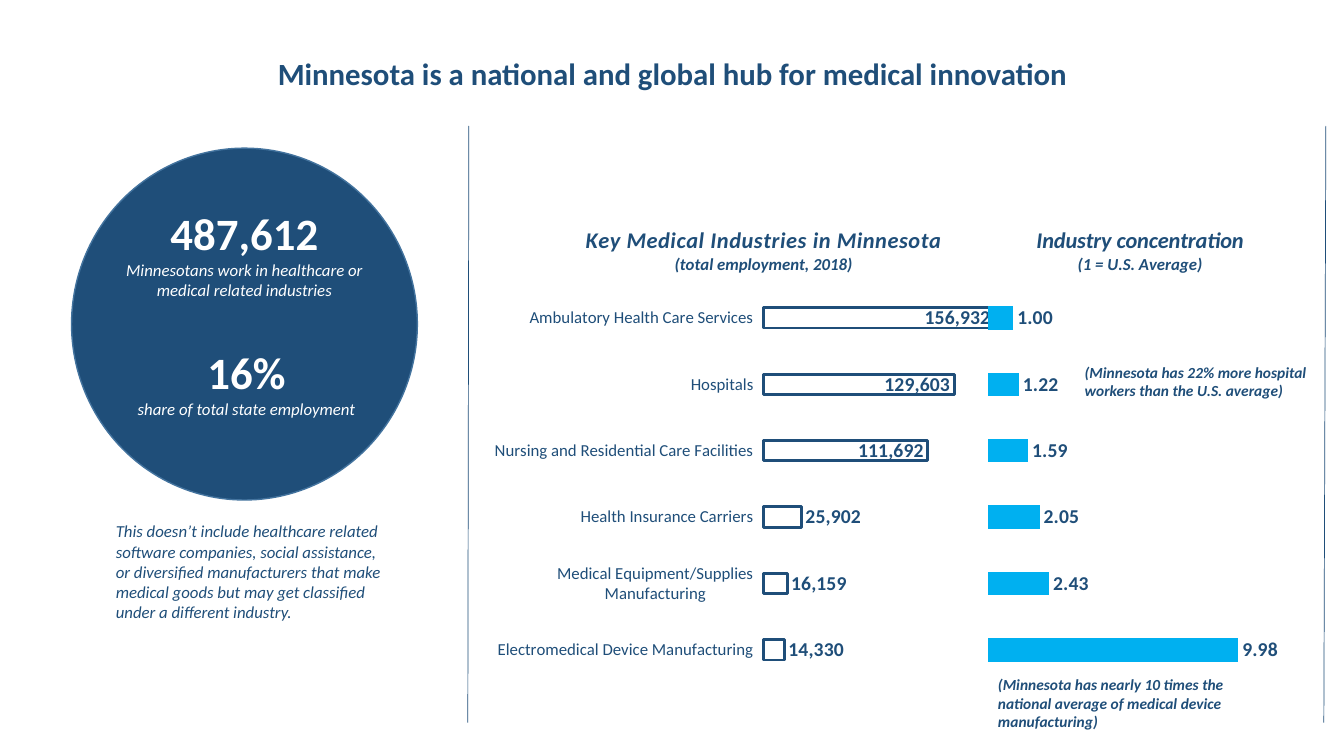
import pptx
import pptx.util
import pptx.chart.data
import pptx.dml.color
import pptx.enum.chart
import pptx.enum.shapes
import pptx.enum.text
import pptx.oxml
import pptx.oxml.ns

Inches = pptx.util.Inches
COLORS = {"navy": "1F4E79", "edge": "43739E", "cyan": "00B0F0", "white": "FFFFFF"}
BIG = {"size": 32, "color": "white", "bold": True}
SMALL = {"size": 12, "color": "white", "italic": True}
NOTE = {"size": 12, "color": "navy", "italic": True}
REMARK = {"size": 11, "color": "navy", "bold": True, "italic": True}
HEADING = {"size": 22, "color": "navy", "bold": True}
CHART_TITLE = {"size": 16, "color": "navy", "bold": True, "italic": True}
CHART_SUBTITLE = {"size": 12, "color": "navy", "bold": True, "italic": True}
VALUE_LABEL = {"size": 14, "color": "navy", "bold": True}
CATEGORY = {"size": 12, "color": "navy", "bold": False}
INDUSTRIES = [
    ("Electromedical Device Manufacturing", 14330, 9.98),
    ("Medical Equipment/Supplies Manufacturing", 16159, 2.43),
    ("Health Insurance Carriers", 25902, 2.05),
    ("Nursing and Residential Care Facilities", 111692, 1.59),
    ("Hospitals", 129603, 1.22),
    ("Ambulatory Health Care Services", 156932, 1),
]


def rgb(name):
    """Return the named colour."""
    return pptx.dml.color.RGBColor.from_string(COLORS[name])


def style_font(font, formats):
    """Apply a dict of format values to a font."""
    font.name = "Calibri"
    for key, value in formats.items():
        if key == "color":
            font.color.rgb = rgb(value)
        else:
            setattr(font, key, pptx.util.Pt(value) if key == "size" else value)


def add_text(s, box, lines, centered=False, middle=False, spacing=None):
    """Add a wrapped text box holding one paragraph of styled lines."""
    sp = s.shapes.add_textbox(*map(Inches, box))
    tf = sp.text_frame
    tf.word_wrap = True
    if middle:
        tf.vertical_anchor = pptx.enum.text.MSO_ANCHOR.MIDDLE
    p = tf.paragraphs[0]
    if centered:
        p.alignment = pptx.enum.text.PP_ALIGN.CENTER
    if spacing:
        p.line_spacing = spacing
    for i, (text, formats) in enumerate(lines):
        if i:
            p.add_line_break()
        r = p.add_run()
        r.text = text
        style_font(r.font, formats)


def add_circle(s, box):
    """Add the filled circle behind the key figures."""
    sp = s.shapes.add_shape(pptx.enum.shapes.MSO_SHAPE.OVAL, *map(Inches, box))
    sp.shadow.inherit = False
    sp.fill.solid()
    sp.fill.fore_color.rgb = rgb("navy")
    sp.line.color.rgb = rgb("edge")
    sp.line.width = pptx.util.Pt(1)


def add_divider(s, x1, x2):
    """Add a thin, nearly vertical rule."""
    points = map(Inches, (x1, 1.25, x2, 7.17))
    sp = s.shapes.add_connector(pptx.enum.shapes.MSO_CONNECTOR.STRAIGHT, *points)
    sp.line.color.rgb = rgb("navy")
    sp.line.width = pptx.util.Pt(0.5)
    sp._element.spPr.append(pptx.oxml.parse_xml(
        f"<a:effectLst {pptx.oxml.ns.nsdecls('a')}/>"))


def make_layout(target=None, **fractions):
    """Build a manual layout from fractions of the chart size."""
    inner = f'<c:layoutTarget val="{target}"/>' if target else ""
    inner += '<c:xMode val="edge"/><c:yMode val="edge"/>'
    inner += "".join(f'<c:{k} val="{v}"/>' for k, v in fractions.items())
    return pptx.oxml.parse_xml(
        f"<c:layout {pptx.oxml.ns.nsdecls('c')}><c:manualLayout>{inner}"
        "</c:manualLayout></c:layout>")


def drop_layout(element):
    """Remove the automatic layout of a chart part."""
    for old in element.xpath("./c:layout"):
        element.remove(old)


def add_chart_title(chart, lines, x, tracking):
    """Add a two-line chart title at a fixed place."""
    chart.has_title = True
    tf = chart.chart_title.text_frame
    for i, (text, formats) in enumerate(zip(lines, (CHART_TITLE, CHART_SUBTITLE))):
        p = tf.add_paragraph() if i else tf.paragraphs[0]
        p.alignment = pptx.enum.text.PP_ALIGN.CENTER
        r = p.add_run()
        r.text = text
        style_font(r.font, formats)
        if tracking and not i:
            r.font._element.set("spc", str(tracking))
    title = chart.chart_title._element
    drop_layout(title)
    title.xpath("./c:tx")[0].addnext(make_layout(x=x, y=0.04))
    chart.chart_title.include_in_layout = False


def add_bars(s, box, cats, vals, fmt, top, gap, plot_x, plot_w):
    """Add a bar chart with bold value labels and return it."""
    data = pptx.chart.data.CategoryChartData(number_format=fmt)
    data.categories = cats
    data.add_series("Series 1", vals)
    kind = pptx.enum.chart.XL_CHART_TYPE.BAR_CLUSTERED
    chart = s.shapes.add_chart(kind, *map(Inches, box), data).chart
    chart.has_legend = False
    chart.font.name = "Calibri"
    chart.font.size = pptx.util.Pt(10)
    axis = chart.value_axis
    axis.visible = axis.has_major_gridlines = False
    axis.minimum_scale, axis.maximum_scale = 0, top
    plot = chart.plots[0]
    plot.gap_width = gap
    plot.vary_by_categories = False
    labels = plot.series[0].data_labels
    labels.show_value = True
    labels.number_format = fmt
    labels.number_format_is_linked = False
    labels.position = pptx.enum.chart.XL_LABEL_POSITION.OUTSIDE_END
    style_font(labels.font, VALUE_LABEL)
    area = chart._chartSpace.xpath(".//c:plotArea")[0]
    drop_layout(area)
    area.insert(0, make_layout("inner", x=plot_x, y=0.167, w=plot_w, h=0.81))
    return chart


def add_employment(s):
    """Add the chart of total employment with outlined bars."""
    names, jobs, _ = zip(*INDUSTRIES)
    chart = add_bars(s, (4.8, 2.01, 5.5, 4.88), names, jobs, "#,##0", 180000, 227, 0.504, 0.478)
    add_chart_title(chart, ("Key Medical Industries in Minnesota",
                            "(total employment, 2018)"), 0.178, 50)
    chart.plots[0].overlap = -48
    style_font(chart.category_axis.tick_labels.font, CATEGORY)
    chart.category_axis.format.line.fill.background()
    series = chart.plots[0].series[0]
    series.format.fill.background()
    series.format.line.color.rgb = rgb("navy")
    series.format.line.width = pptx.util.Pt(2)
    position = pptx.enum.chart.XL_LABEL_POSITION
    series.data_labels.position = position.INSIDE_END
    for i in range(3):
        label = series.points[i].data_label
        style_font(label.font, VALUE_LABEL)
        label.position = position.OUTSIDE_END


def add_concentration(s):
    """Add the chart of industry concentration with filled bars."""
    ratios = [row[2] for row in INDUSTRIES]
    chart = add_bars(s, (9.74, 2.01, 3.12, 4.88), list("123456"), ratios, "0.00", 12, 182, 0.02, 0.956)
    add_chart_title(chart, ("Industry concentration", "(1 = U.S. Average)"), 0.163, 0)
    chart.category_axis.visible = False
    fill = chart.plots[0].series[0].format.fill
    fill.solid()
    fill.fore_color.rgb = rgb("cyan")


def main():
    """Build the slide and save it."""
    prs = pptx.Presentation()
    prs.slide_width, prs.slide_height = Inches(13.33), Inches(7.5)
    s = prs.slides.add_slide(prs.slide_layouts[6])
    add_text(s, (0.92, 0.38, 11.5, 0.74),
             [("Minnesota is a national and global hub for medical innovation", HEADING)],
             centered=True, middle=True, spacing=0.9)
    add_circle(s, (0.71, 1.47, 3.43, 3.49))
    add_text(s, (1.03, 1.99, 2.79, 1.04),
             [("487,612", BIG),
              ("Minnesotans work in healthcare or medical related industries", SMALL)], centered=True)
    add_text(s, (1.05, 3.37, 2.79, 0.84),
             [("16%", BIG), ("share of total state employment", SMALL)], centered=True)
    add_text(s, (1.05, 5.12, 2.92, 1.11),
             [("This doesn’t include healthcare related software companies, social assistance, "
               "or diversified manufacturers that make medical goods but may get classified "
               "under a different industry.", NOTE)])
    add_employment(s)
    add_concentration(s)
    add_divider(s, 4.65, 4.64)
    add_divider(s, 13.15, 13.13)
    add_text(s, (10.66, 3.55, 2.47, 0.47),
             [("(Minnesota has 22% more hospital workers than the U.S. average)", REMARK)])
    add_text(s, (9.8, 6.65, 3, 0.47),
             [("(Minnesota has nearly 10 times the national average of medical device "
               "manufacturing)", REMARK)])
    prs.save("out.pptx")


if __name__ == "__main__":
    main()
